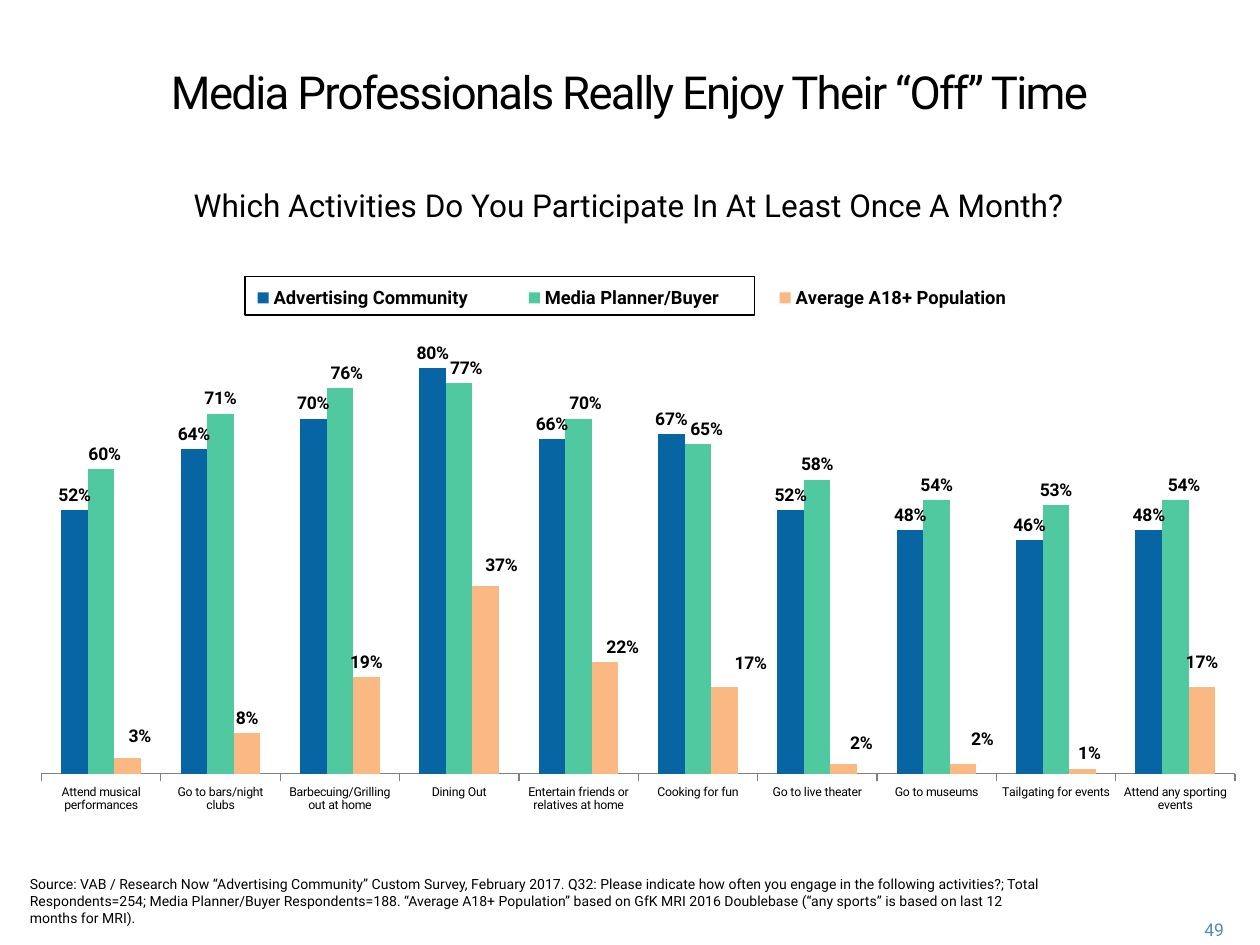
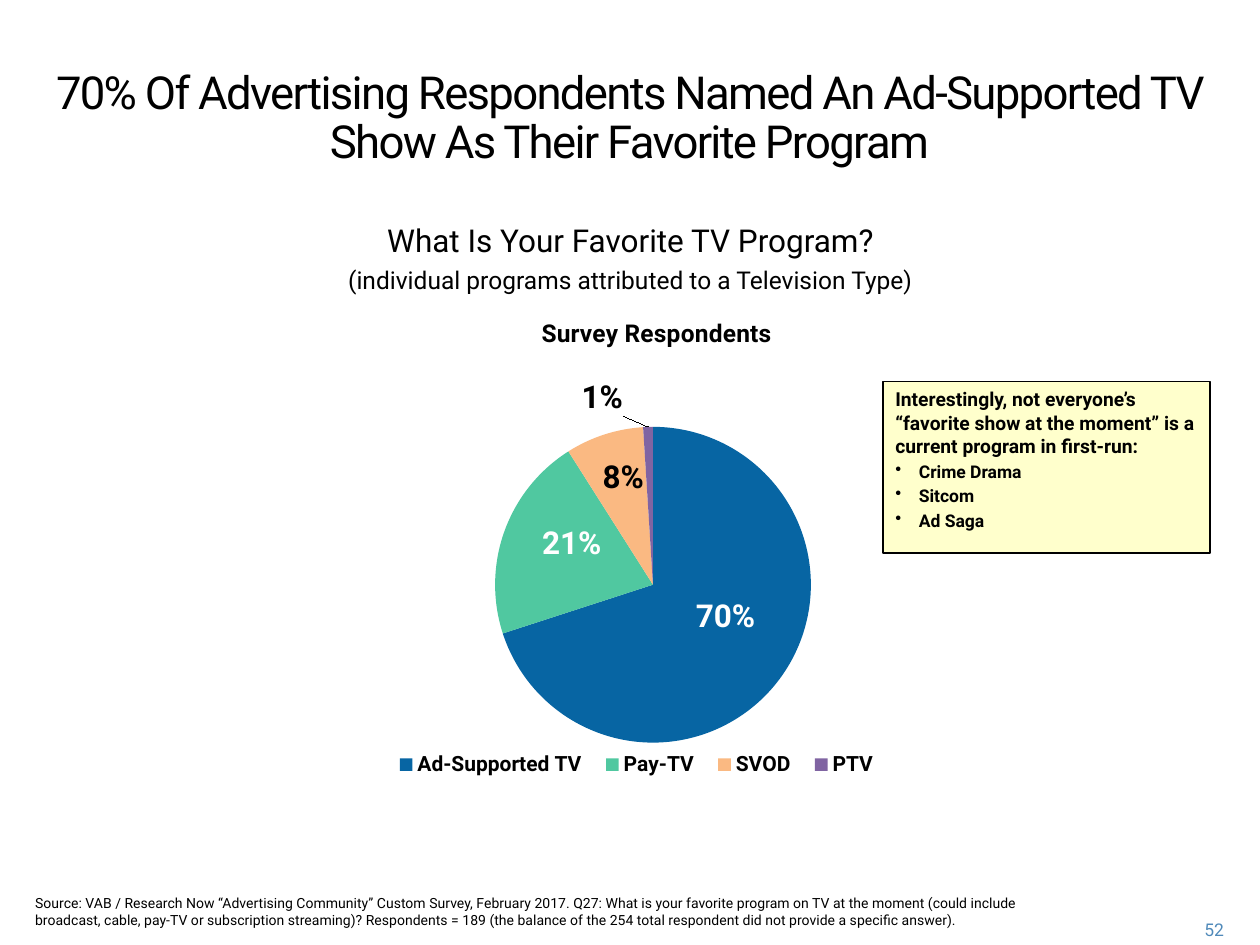
from lxml import etree
from pptx import Presentation
from pptx.chart import data as chart_data
from pptx.dml import color
from pptx.enum import chart as kinds, shapes, text
from pptx.oxml import ns
from pptx.util import Pt

FONT = "Roboto"
BLACK, WHITE, PAGE_BLUE, GRAY, NOTE_YELLOW = "000000", "FFFFFF", "508ABA", "808080", "FFFFCC"
BLUE, GREEN, PEACH, PURPLE = "0765A3", "50C8A0", "FAB982", "8064A2"
LEFT, CENTER, RIGHT = text.PP_ALIGN.LEFT, text.PP_ALIGN.CENTER, text.PP_ALIGN.RIGHT
LABEL = kinds.XL_LABEL_POSITION
LEGEND = kinds.XL_LEGEND_POSITION

ACTIVITIES = [
    "Attend musical performances", "Go to bars/night clubs", "Barbecuing/Grilling out at home",
    "Dining Out", "Entertain friends or relatives at home", "Cooking for fun",
    "Go to live theater", "Go to museums", "Tailgating for events", "Attend any sporting events",
]
ACTIVITY_SERIES = [
    ("Advertising Community", BLUE,
     [0.52, 0.64, 0.7, 0.8, 0.66, 0.67, 0.52, 0.48, 0.46, 0.48], {}),
    ("Media Planner/Buyer", GREEN,
     [0.6, 0.71, 0.76, 0.77, 0.7, 0.65, 0.58, 0.54, 0.53, 0.54],
     {0: (2, 0), 2: (4, 0), 3: (4, 0), 4: (4, 0), 5: (5, 0), 9: (5, 0)}),
    ("Average A18+ Population", PEACH,
     [0.03, 0.08, 0.19, 0.37, 0.22, 0.17, 0.02, 0.02, 0.01, 0.17],
     {0: (7, -4), 3: (9, -3), 4: (10, 0), 5: (15, -5), 6: (10, -3), 7: (11, -5),
      8: (4, 0), 9: (0, -6)}),
]
PROGRAM_TYPES = [
    ("Ad-Supported TV", 0.7, BLUE, WHITE, LABEL.CENTER, (5, -8)),
    ("Pay-TV", 0.21, GREEN, WHITE, LABEL.CENTER, (-4, -8)),
    ("SVOD", 0.08, PEACH, BLACK, LABEL.CENTER, (-3, -18)),
    ("PTV", 0.01, PURPLE, BLACK, LABEL.OUTSIDE_END, (-26, -2)),
]


def rgb(value):
    return color.RGBColor.from_string(value)


def set_font(font, size, tone=BLACK, bold=False):
    font.name, font.size, font.bold = FONT, Pt(size), bold
    font.color.rgb = rgb(tone)


def add_bullet(para):
    props = para._p.get_or_add_pPr()
    props.set("marL", str(Pt(13.5)))
    props.set("indent", str(-Pt(13.5)))
    etree.SubElement(props, ns.qn("a:buChar")).set("char", "•")


def fill_text(frame, lines, align=LEFT, tone=BLACK, bold=False, gap=3):
    frame.word_wrap = True
    frame.vertical_anchor = text.MSO_ANCHOR.TOP
    for index, (words, size, bulleted) in enumerate(lines):
        para = frame.paragraphs[0] if index == 0 else frame.add_paragraph()
        para.text = words
        para.alignment = align
        if index:
            para.space_before = Pt(gap)
        if bulleted:
            add_bullet(para)
        set_font(para.font, size, tone, bold)


def add_text(page, box, lines, align=LEFT, tone=BLACK):
    frame = page.shapes.add_textbox(*map(Pt, box)).text_frame
    fill_text(frame, lines, align, tone)
    return frame


def add_title(page, words):
    frame = add_text(page, (13, 36, 693.5, 66), [(words, 26, False)], CENTER)
    para = frame.paragraphs[0]
    para.line_spacing = Pt(28)
    para.runs[0]._r.get_or_add_rPr().set("spc", "-100")


def add_page_number(page, number):
    add_text(page, (662.5, 521.5, 44, 18), [(number, 10, False)], RIGHT, PAGE_BLUE)


def add_box(page, box, fill=None):
    shape = page.shapes.add_shape(shapes.MSO_SHAPE.RECTANGLE, *map(Pt, box))
    shape.shadow.inherit = False
    if fill:
        shape.fill.solid()
        shape.fill.fore_color.rgb = rgb(fill)
    else:
        shape.fill.background()
    shape.line.color.rgb = rgb(BLACK)
    shape.line.width = Pt(0.75)
    return shape


def set_layout(parent, index, **settings):
    for old in parent.findall(ns.qn("c:layout")):
        parent.remove(old)
    layout = etree.Element(ns.qn("c:layout"))
    manual = etree.SubElement(layout, ns.qn("c:manualLayout"))
    for key, value in settings.items():
        etree.SubElement(manual, ns.qn("c:" + key)).set("val", str(value))
    parent.insert(index, layout)


def place_part(parent, index, area, **target):
    set_layout(parent, index, **target, xMode="edge", yMode="edge", **dict(zip("xywh", area)))


def add_chart(page, box, kind, data, size, plot_area, legend_side, legend_size, legend_area):
    chart = page.shapes.add_chart(kind, *map(Pt, box), data).chart
    set_font(chart.font, size)
    chart.has_title = False
    chart.has_legend = True
    chart.legend.position = legend_side
    chart.legend.include_in_layout = False
    set_font(chart.legend.font, legend_size, bold=True)
    place_part(chart.legend._element, 1, legend_area)
    plot_element = chart._chartSpace.find(".//" + ns.qn("c:plotArea"))
    place_part(plot_element, 0, plot_area, layoutTarget="inner")
    return chart


def show_values(series, size, tone, leaders):
    labels = series.data_labels
    labels.show_value = True
    labels.number_format = "0%"
    labels.number_format_is_linked = False
    set_font(labels.font, size, tone, True)
    for element in series._element.iter(ns.qn("c:showLeaderLines")):
        element.set("val", str(int(leaders)))
    return labels


def move_label(series, index, position, offset, box, size, tone):
    label = series.points[index].data_label
    label.position = position
    set_font(label.font, size, tone, True)
    for element in series._element.iter(ns.qn("c:dLbl")):
        if element.find(ns.qn("c:idx")).get("val") == str(index):
            set_layout(element, 1, x=round(offset[0] / box[2], 4), y=round(offset[1] / box[3], 4))


def add_activity_chart(page, box):
    data = chart_data.CategoryChartData(number_format="0%")
    data.categories = ACTIVITIES
    for name, _, values, _ in ACTIVITY_SERIES:
        data.add_series(name, values)
    chart = add_chart(page, box, kinds.XL_CHART_TYPE.COLUMN_CLUSTERED, data, 7,
                      (0.02, 0.095, 0.96, 0.815), LEGEND.TOP, 10.5, (0.15, 0.03, 0.69, 0.06))
    plot = chart.plots[0]
    plot.gap_width, plot.overlap = 150, 0
    plot.vary_by_categories = False
    values_axis, activity_axis = chart.value_axis, chart.category_axis
    values_axis.minimum_scale, values_axis.maximum_scale = 0, 0.9
    values_axis.has_major_gridlines = False
    values_axis.visible = False
    activity_axis.major_tick_mark = kinds.XL_TICK_MARK.OUTSIDE
    activity_axis.format.line.color.rgb = rgb(GRAY)
    set_font(activity_axis.tick_labels.font, 7)
    for series, (_, tone, _, offsets) in zip(plot.series, ACTIVITY_SERIES):
        series.format.fill.solid()
        series.format.fill.fore_color.rgb = rgb(tone)
        show_values(series, 10, BLACK, False).position = LABEL.OUTSIDE_END
        for index, offset in offsets.items():
            move_label(series, index, LABEL.OUTSIDE_END, offset, box, 10, BLACK)
    left, top = box[:2]
    add_box(page, (left + 130.5, top + 7, 291, 22))


def add_program_chart(page, box):
    data = chart_data.CategoryChartData(number_format="0%")
    data.categories = [row[0] for row in PROGRAM_TYPES]
    data.add_series("Survey Respondents", [row[1] for row in PROGRAM_TYPES])
    chart = add_chart(page, box, kinds.XL_CHART_TYPE.PIE, data, 18,
                      (0.362, 0.243, 0.286, 0.624), LEGEND.BOTTOM, 12, (0.26, 0.87, 0.46, 0.08))
    chart.has_title = True
    title = chart.chart_title.text_frame
    title.text = "Survey Respondents"
    set_font(title.paragraphs[0].font, 14, bold=True)
    place_part(chart.chart_title._element, 1, (0.4, 0.015))
    chart.plots[0].vary_by_categories = True
    series = chart.plots[0].series[0]
    show_values(series, 18, WHITE, True)
    for index, (_, _, fill, tone, position, offset) in enumerate(PROGRAM_TYPES):
        point = series.points[index]
        point.format.fill.solid()
        point.format.fill.fore_color.rgb = rgb(fill)
        move_label(series, index, position, offset, box, 18, tone)


def add_note(page, box):
    heading = ("Interestingly, not everyone’s “favorite show at the moment” is a "
               "current program in first-run:")
    shows = [(show, 10, True) for show in ("Crime Drama", "Sitcom", "Ad Saga")]
    note = add_box(page, box, NOTE_YELLOW)
    fill_text(note.text_frame, [(heading, 11, False)] + shows, bold=True, gap=2)


def build_activities(page):
    add_page_number(page, "49")
    add_title(page, "Media Professionals Really Enjoy Their “Off” Time")
    question = "Which Activities Do You Participate In At Least Once A Month?"
    add_text(page, (12.5, 103, 693.5, 29), [(question, 18, False)], CENTER)
    source = ("Source: VAB / Research Now “Advertising Community” Custom Survey, February 2017. "
              "Q32: Please indicate how often you engage in the following activities?; Total "
              "Respondents=254; Media Planner/Buyer Respondents=188. “Average A18+ Population” "
              "based on GfK MRI 2016 Doublebase (“any sports” is based on last 12 months for MRI).")
    add_text(page, (10, 497, 600.5, 19), [(source, 8, False)])
    add_activity_chart(page, (9.5, 151, 710.5, 320))


def build_programs(page):
    add_page_number(page, "52")
    source = ("Source: VAB / Research Now “Advertising Community” Custom Survey, February 2017. "
              "Q27: What is your favorite program on TV at the moment (could include broadcast, "
              "cable, pay-TV or subscription streaming)? Respondents = 189 (the balance of the "
              "254 total respondent did not provide a specific answer).")
    add_text(page, (13, 507.5, 590.5, 22), [(source, 8, False)])
    add_title(page, "70% Of Advertising Respondents Named An Ad-Supported TV Show As Their "
                    "Favorite Program")
    add_program_chart(page, (54.5, 173.5, 631, 289.5))
    question = [("What Is Your Favorite TV Program?", 18, False),
                ("(individual programs attributed to a Television Type)", 14, False)]
    add_text(page, (13.5, 123, 693.5, 29), question, CENTER)
    add_note(page, (504.5, 218, 187, 98))


def main():
    deck = Presentation()
    deck.slide_width, deck.slide_height = Pt(720), Pt(540)
    for build in (build_activities, build_programs):
        build(deck.slides.add_slide(deck.slide_layouts[6]))
    deck.save("out.pptx")


if __name__ == "__main__":
    main()
